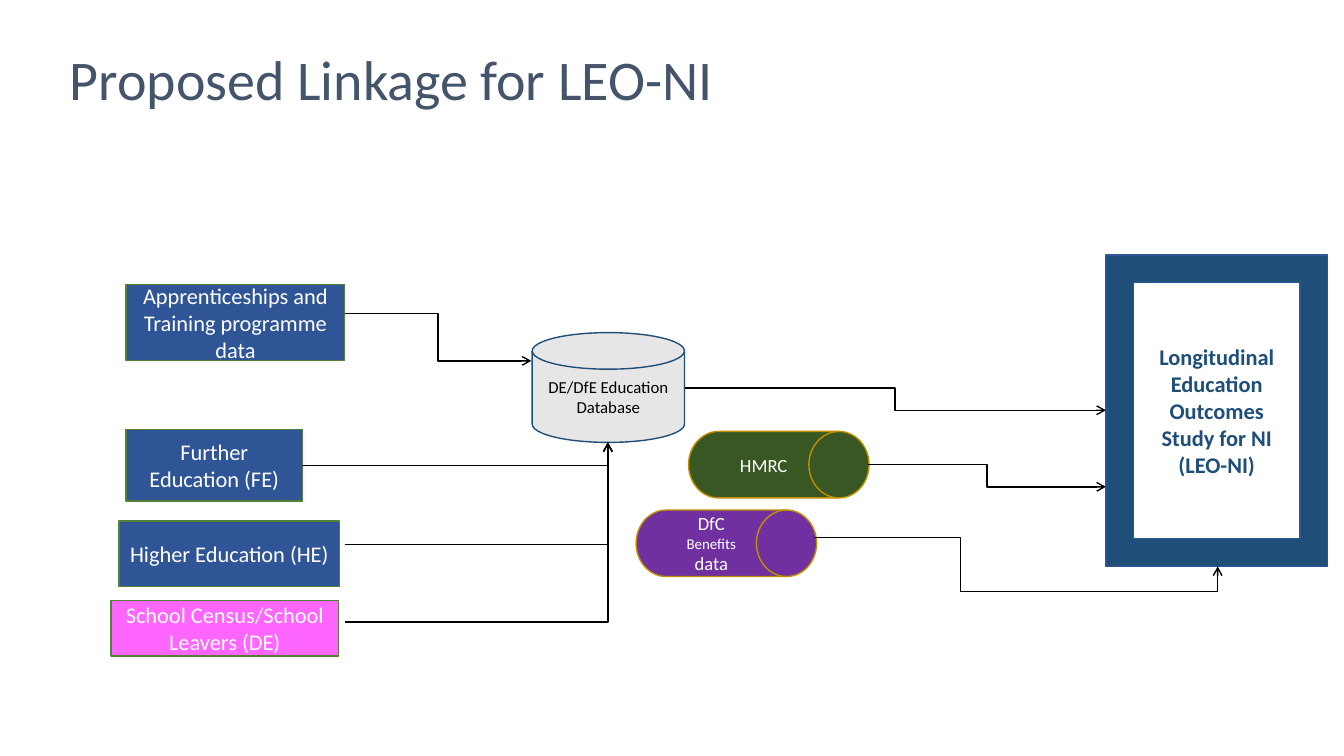
import pptx
import pptx.dml.color
import pptx.enum.shapes
import pptx.enum.text
import pptx.oxml
import pptx.oxml.ns
import pptx.util

RGBColor = pptx.dml.color.RGBColor
Shape = pptx.enum.shapes.MSO_SHAPE
Anchor = pptx.enum.text.MSO_ANCHOR
Align = pptx.enum.text.PP_ALIGN

WHITE = RGBColor(0xFF, 0xFF, 0xFF)
BLACK = RGBColor(0x00, 0x00, 0x00)
SLATE = RGBColor(0x44, 0x54, 0x6A)
NAVY = RGBColor(0x1F, 0x4E, 0x79)
BLUE = RGBColor(0x2F, 0x55, 0x97)
GREY = RGBColor(0xE7, 0xE6, 0xE6)
GREEN = RGBColor(0x54, 0x82, 0x35)
FOREST = RGBColor(0x38, 0x57, 0x23)
PURPLE = RGBColor(0x70, 0x30, 0xA0)
GOLD = RGBColor(0xBF, 0x90, 0x00)
PINK = RGBColor(0xFF, 0x66, 0xFF)


class LinkageSlide:
    font_name = "Calibri"
    line_width = pptx.util.Pt(1)

    def __init__(self, deck):
        self.deck = deck
        self.page = deck.slides.add_slide(deck.slide_layouts[5])

    def across(self, share):
        """Turn a percentage of the slide width into a length."""
        return round(self.deck.slide_width * share / 100)

    def down(self, share):
        """Turn a percentage of the slide height into a length."""
        return round(self.deck.slide_height * share / 100)

    def area(self, left, top, width, height):
        return self.across(left), self.down(top), self.across(width), self.down(height)

    def style(self, para, size, color, align, bold=False):
        para.alignment = align
        para.font.name = self.font_name
        para.font.size = pptx.util.Pt(size)
        para.font.color.rgb = color
        para.font.bold = bold

    def title(self, text, area):
        box = self.page.shapes.title
        box.left, box.top, box.width, box.height = self.area(*area)
        frame = box.text_frame
        frame.text = text
        frame.vertical_anchor = Anchor.TOP
        frame.auto_size = pptx.enum.text.MSO_AUTO_SIZE.NONE
        self.style(frame.paragraphs[0], 40, SLATE, Align.LEFT)

    def box(self, kind, area, text, fill, line, size=16, color=WHITE, bold=False):
        box = self.page.shapes.add_shape(kind, *self.area(*area))
        box.shadow.inherit = False
        box.fill.solid()
        box.fill.fore_color.rgb = fill
        box.line.color.rgb = line
        box.line.width = self.line_width
        frame = box.text_frame
        frame.word_wrap = True
        frame.vertical_anchor = Anchor.MIDDLE
        frame.text = text
        for para in frame.paragraphs:
            self.style(para, size, color, Align.CENTER, bold)
        return box

    def arrow(self, start, end, bends=2, adjustments=()):
        """Draw an elbow arrow with one, two or three bends."""
        arrow = self.page.shapes.add_connector(
            pptx.enum.shapes.MSO_CONNECTOR.ELBOW,
            self.across(start[0]), self.down(start[1]),
            self.across(end[0]), self.down(end[1]))
        arrow.line.color.rgb = BLACK
        arrow.line.width = self.line_width
        namespace = pptx.oxml.ns.nsdecls("a")
        guides = "".join(f'<a:gd name="adj{number}" fmla="val {value}"/>'
                         for number, value in enumerate(adjustments, 1))
        properties = arrow._element.spPr
        old_geometry = properties.find(pptx.oxml.ns.qn("a:prstGeom"))
        properties.replace(old_geometry, pptx.oxml.parse_xml(
            f'<a:prstGeom {namespace} prst="bentConnector{bends + 1}">'
            f'<a:avLst>{guides}</a:avLst></a:prstGeom>'))
        arrow.line._get_or_add_ln().append(
            pptx.oxml.parse_xml(f'<a:tailEnd {namespace} type="arrow"/>'))
        properties.append(pptx.oxml.parse_xml(f"<a:effectLst {namespace}/>"))


def main():
    deck = pptx.Presentation()
    deck.slide_width = pptx.util.Inches(13.33)
    deck.slide_height = pptx.util.Inches(7.5)
    slide = LinkageSlide(deck)
    slide.title("Proposed Linkage for LEO-NI", (4.43, 5.2, 79.2, 14.4))

    study_left = 82.28
    slide.box(Shape.FRAME, (study_left, 33.73, 16.5, 41.2),
              "Longitudinal\nEducation Outcomes Study for NI\n(LEO-NI)",
              NAVY, BLUE, color=NAVY, bold=True)
    slide.box(Shape.FLOWCHART_MAGNETIC_DISK, (39.6, 44, 11.33, 14.53),
              "DE/DfE Education Database", GREY, NAVY, size=12, color=BLACK)

    drum = Shape.FLOWCHART_DIRECT_ACCESS_STORAGE
    slide.box(drum, (51.23, 57.07, 13.43, 8.8), "HMRC", FOREST, GOLD, size=13.3)
    benefits = slide.box(drum, (47.33, 67.47, 13.43, 8.8), "DfC ", PURPLE, GOLD, size=13.3)
    para = benefits.text_frame.paragraphs[0]
    for text, size in (("Benefits ", 10.7), ("data", 13.3)):
        span = para.add_run()
        span.text = text
        span.font.size = pptx.util.Pt(size)

    sources = (
        ("Apprenticeships and Training programme data", (9.38, 37.6, 16.28, 10.13), BLUE),
        ("Further Education (FE)", (9.38, 56.8, 13.13, 9.47), BLUE),
        ("Higher Education (HE) ", (8.85, 68.93, 16.43, 8.67), BLUE),
        ("School Census/School Leavers (DE)", (8.25, 79.47, 16.95, 7.33), PINK),
    )
    for text, area, fill in sources:
        slide.box(Shape.RECTANGLE, area, text, fill, GREEN)

    database_base = (45.23, 58.53)
    for start in ((22.5, 61.6), (25.65, 72), (25.65, 82.27)):
        slide.arrow(start, database_base, bends=1)
    slide.arrow((25.65, 41.47), (39.53, 47.73))
    slide.arrow((50.93, 51.33), (study_left, 54.27))
    slide.arrow((64.58, 61.47), (study_left, 64.4))
    slide.arrow((60.6, 71.07), (90.6, 74.93), bends=3, adjustments=(36200, 186700))

    deck.save("out.pptx")


if __name__ == "__main__":
    main()
